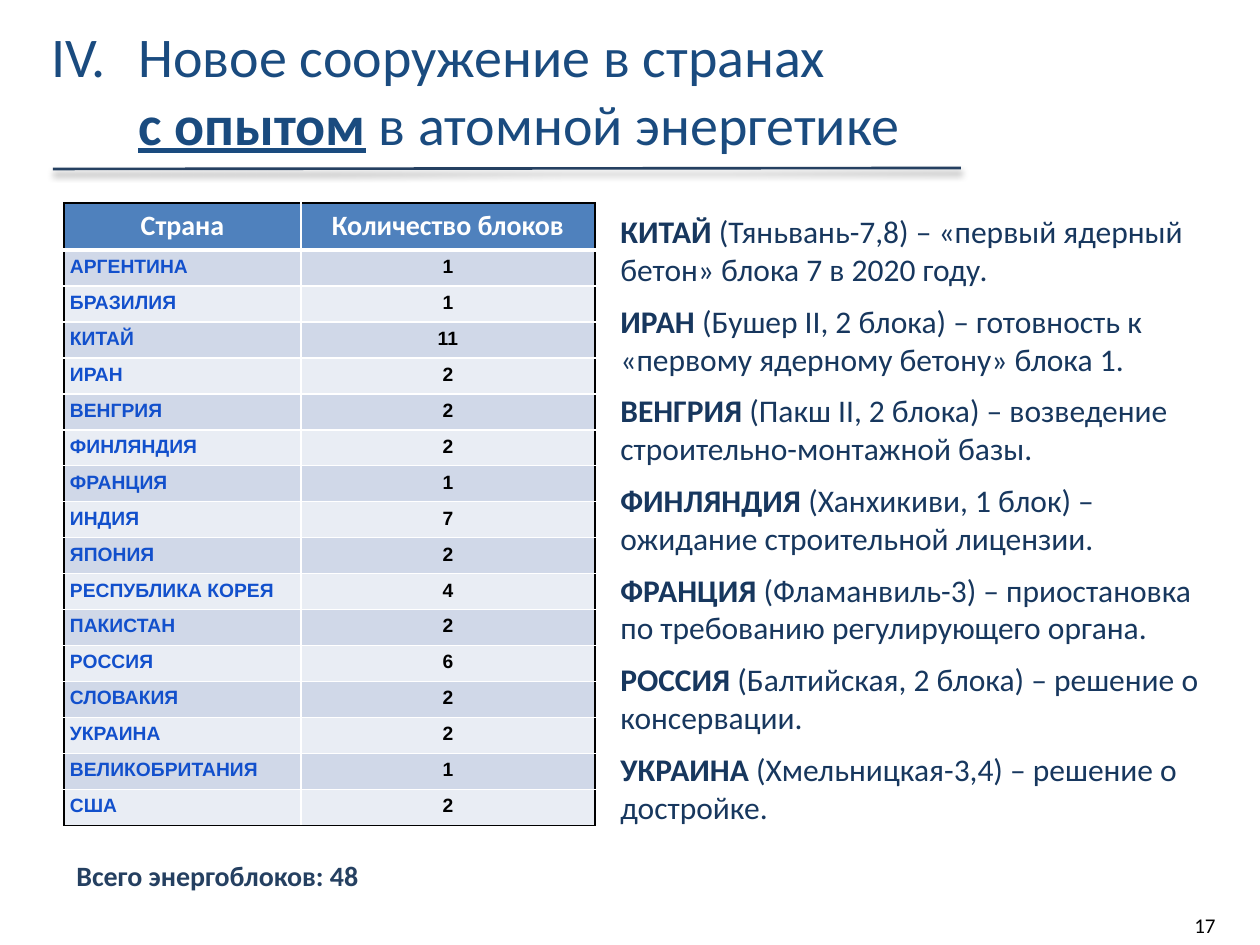
from lxml.etree import SubElement
from pptx import Presentation
from pptx.dml.color import RGBColor
from pptx.enum.shapes import MSO_CONNECTOR
from pptx.enum.text import MSO_ANCHOR, MSO_AUTO_SIZE, PP_ALIGN
from pptx.oxml.ns import qn
from pptx.util import Pt

EMU_PER_INCH = 914400
PX_PER_INCH = 126

COLORS = {
    "title": "1A4B7F",
    "navy": "254061",
    "body": "17375E",
    "country": "1250CC",
    "header": "4F81BD",
    "band_dark": "D0D8E8",
    "band_light": "E9EDF4",
    "white": "FFFFFF",
    "black": "000000",
}

COUNTRIES = [
    ("АРГЕНТИНА", 1), ("БРАЗИЛИЯ", 1), ("КИТАЙ", 11), ("ИРАН", 2),
    ("ВЕНГРИЯ", 2), ("ФИНЛЯНДИЯ", 2), ("ФРАНЦИЯ", 1), ("ИНДИЯ", 7),
    ("ЯПОНИЯ", 2), ("РЕСПУБЛИКА КОРЕЯ", 4), ("ПАКИСТАН", 2), ("РОССИЯ", 6),
    ("СЛОВАКИЯ", 2), ("УКРАИНА", 2), ("ВЕЛИКОБРИТАНИЯ", 1), ("США", 2),
]

PROJECTS = [
    ("КИТАЙ", " (Тяньвань-7,8) – «первый ядерный бетон» блока 7 в 2020 году."),
    ("ИРАН", " (Бушер II, 2 блока) – готовность к «первому ядерному бетону» блока 1."),
    ("ВЕНГРИЯ", " (Пакш II, 2 блока) – возведение строительно-монтажной базы."),
    ("ФИНЛЯНДИЯ", " (Ханхикиви, 1 блок) – ожидание строительной лицензии."),
    ("ФРАНЦИЯ", " (Фламанвиль-3) – приостановка по требованию регулирующего органа."),
    ("РОССИЯ", " (Балтийская, 2 блока) – решение о консервации."),
    ("УКРАИНА", " (Хмельницкая-3,4) – решение о достройке."),
]


def px(length):
    return round(length * EMU_PER_INCH / PX_PER_INCH)


def color(name):
    return RGBColor.from_string(COLORS[name])


class SlideBuilder:
    heading_font = "Calibri"
    table_font = "Arial"

    def __init__(self, presentation):
        self.slide = presentation.slides.add_slide(presentation.slide_layouts[6])

    def style(self, run, size, color_name, bold=False, font=heading_font):
        run.font.name = font
        run.font.size = Pt(size)
        run.font.bold = bold
        run.font.color.rgb = color(color_name)

    def fill_paragraph(self, paragraph, pieces, size, color_name):
        paragraph.text = pieces[0][0]
        self.style(paragraph.runs[0], size, color_name, pieces[0][1])
        for text, bold in pieces[1:]:
            run = paragraph.add_run()
            run.text = text
            self.style(run, size, color_name, bold)

    def text(self, box, paragraphs, size, color_name, align=PP_ALIGN.LEFT,
             anchor=MSO_ANCHOR.TOP, wrap=True, gap=0):
        text_frame = self.slide.shapes.add_textbox(*map(px, box)).text_frame
        text_frame.word_wrap = wrap
        text_frame.auto_size = MSO_AUTO_SIZE.NONE
        text_frame.vertical_anchor = anchor
        for index, pieces in enumerate(paragraphs):
            paragraph = text_frame.add_paragraph() if index else text_frame.paragraphs[0]
            paragraph.alignment = align
            paragraph.space_after = Pt(gap)
            self.fill_paragraph(paragraph, pieces, size, color_name)
        return text_frame

    def number(self, paragraph, start, indent):
        properties = paragraph._p.get_or_add_pPr()
        properties.set("marL", str(px(indent)))
        properties.set("indent", str(-px(indent)))
        SubElement(properties, qn("a:buFont"), typeface=self.heading_font)
        SubElement(properties, qn("a:buAutoNum"), type="romanUcPeriod", startAt=str(start))

    def rule(self, start, end):
        connector = self.slide.shapes.add_connector(
            MSO_CONNECTOR.STRAIGHT, *map(px, start + end))
        connector.line.color.rgb = color("navy")
        connector.line.width = Pt(1.5)
        effects = SubElement(connector._element.spPr, qn("a:effectLst"))
        shadow = SubElement(effects, qn("a:outerShdw"), blurRad=str(Pt(4)),
                            dist=str(Pt(3)), dir="5400000", rotWithShape="0")
        shade = SubElement(shadow, qn("a:srgbClr"), val=COLORS["black"])
        SubElement(shade, qn("a:alpha"), val="40000")

    def border(self, cell, side, color_name, width):
        line = SubElement(cell._tc.get_or_add_tcPr(), qn("a:ln" + side), w=str(Pt(width)))
        fill = SubElement(line, qn("a:solidFill"))
        SubElement(fill, qn("a:srgbClr"), val=COLORS[color_name])

    def cell(self, cell, text, size, color_name, font, align, fill, edges):
        cell.text = text
        paragraph = cell.text_frame.paragraphs[0]
        paragraph.alignment = align
        self.style(paragraph.runs[0], size, color_name, True, font)
        for side, (edge_color, width) in edges.items():
            self.border(cell, side, edge_color, width)
        cell.fill.solid()
        cell.fill.fore_color.rgb = color(fill)

    def table(self, left, top, widths, header_height, row_height, header, rows):
        height = header_height + row_height * len(rows)
        table = self.slide.shapes.add_table(
            len(rows) + 1, len(widths),
            *map(px, (left, top, sum(widths), height))).table
        for column, width in zip(table.columns, widths):
            column.width = px(width)
        last_row, last_column = len(rows), len(widths) - 1
        for r, values in enumerate([header] + rows):
            table.rows[r].height = px(row_height if r else header_height)
            for c, value in enumerate(values):
                cell = table.cell(r, c)
                edges = {
                    "L": ("white" if c else "black", 1),
                    "R": ("black" if c == last_column else "white", 1),
                    "T": ("white", 3 if r == 1 else 1) if r else ("black", 1),
                    "B": ("black" if r == last_row else "white", 1 if r else 3),
                }
                if r == 0:
                    self.cell(cell, value, 16, "white", self.heading_font,
                              PP_ALIGN.CENTER, "header", edges)
                    continue
                cell.margin_left = cell.margin_right = px(6)
                cell.margin_top = cell.margin_bottom = px(6)
                self.cell(cell, str(value), 11, "black" if c else "country",
                          self.table_font, PP_ALIGN.CENTER if c else PP_ALIGN.LEFT,
                          "band_dark" if r % 2 else "band_light", edges)


def main():
    presentation = Presentation()
    presentation.slide_width = px(1260)
    presentation.slide_height = px(945)
    builder = SlideBuilder(presentation)

    builder.rule((53, 169), (961, 168))
    title = builder.text(
        (39, 24, 1007, 130),
        [[("Новое сооружение в странах\v", False), ("c опытом", True),
          (" в атомной энергетике", False)]],
        32, "title", anchor=MSO_ANCHOR.MIDDLE)
    title.paragraphs[0].runs[1].font.underline = True
    builder.number(title.paragraphs[0], 4, 87)

    builder.text((1125, 906, 103, 39), [[("17", False)]], 12, "black",
                 align=PP_ALIGN.RIGHT, anchor=MSO_ANCHOR.MIDDLE)
    builder.table(64, 203, (237, 294), 47, 36,
                  ("Страна", "Количество блоков"), COUNTRIES)
    builder.text((64, 852, 324, 47), [[("Всего энергоблоков: 48", True)]],
                 16, "navy", wrap=False)
    builder.text((608, 206, 611, 632),
                 [[(country, True), (status, False)] for country, status in PROJECTS],
                 18, "body", gap=8)

    presentation.save("out.pptx")


if __name__ == "__main__":
    main()
